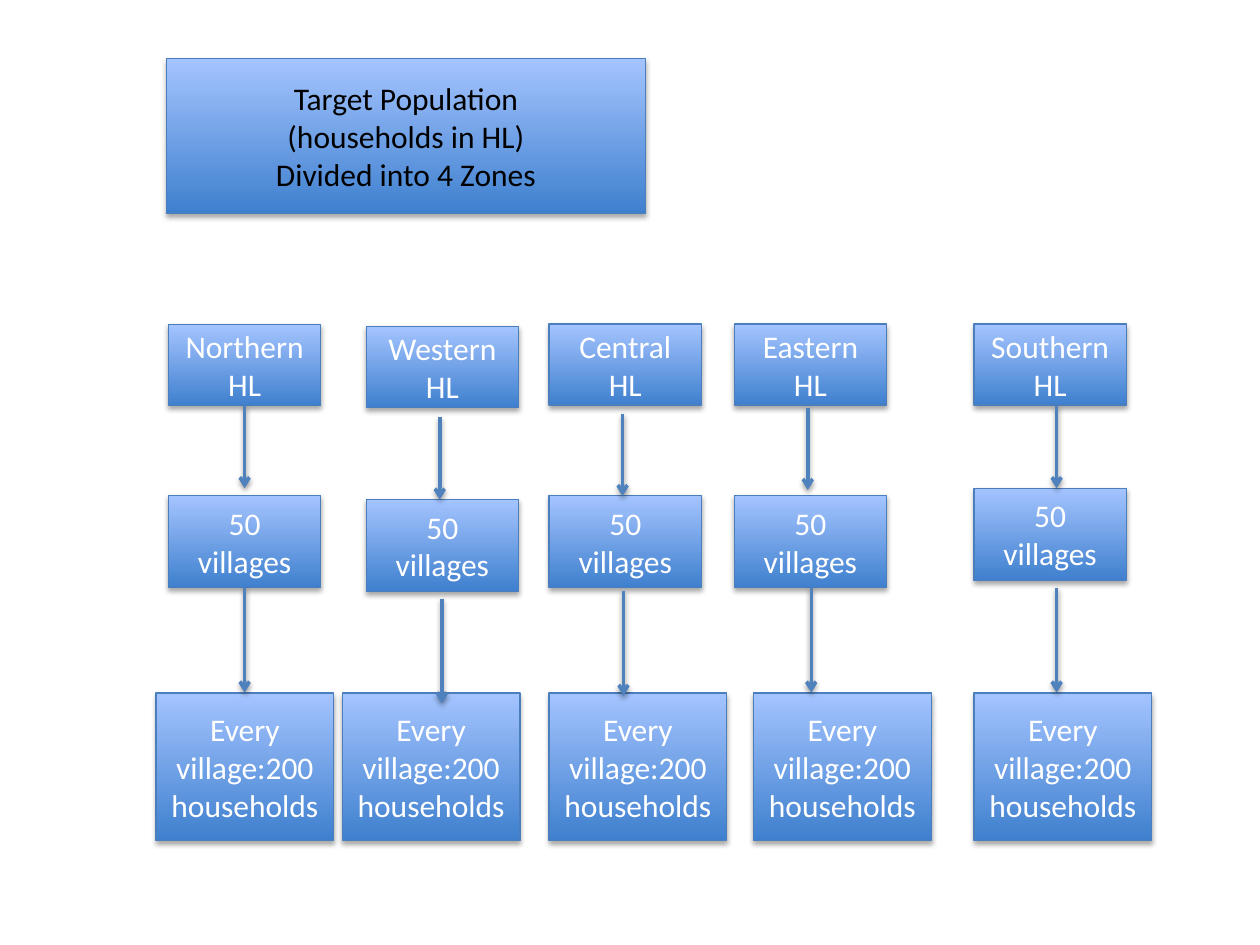
from lxml import etree
from pptx import Presentation
from pptx.dml.color import RGBColor
from pptx.enum.shapes import MSO_CONNECTOR as Connector, MSO_SHAPE as Shape
from pptx.enum.text import MSO_ANCHOR as Anchor, PP_ALIGN as Align
from pptx.oxml.ns import qn
from pptx.util import Pt


def color(value):
    return RGBColor.from_string(value)


def add_shadow(shape, opacity, distance):
    properties = shape._element.spPr
    effects = etree.SubElement(properties, qn("a:effectLst"))
    shadow = etree.SubElement(
        effects, qn("a:outerShdw"), blurRad=str(Pt(3.1)), dist=str(Pt(distance)),
        dir="5400000", rotWithShape="0")
    tint = etree.SubElement(shadow, qn("a:srgbClr"), val="000000")
    etree.SubElement(tint, qn("a:alpha"), val=str(opacity * 1000))


deck = Presentation()
deck.slide_width, deck.slide_height = Pt(720), Pt(540)
page = deck.slides.add_slide(deck.slide_layouts[6])

# Box sizes and the rules for each row
ZONE_SIZE = (87, 46.3)
VILLAGE_SIZE = (87, 52.6)
HOUSEHOLD_SIZE = (101.5, 84.2)
HOUSEHOLD_TOP = 396
ZONE_ARROW, VILLAGE_ARROW = 47, 60

# Zone lines, box left, zone top, village top, household left,
# then x and top of the arrow under the zone and under the villages
zones = [
    (["Northern HL"], 96.3, 185.5, 283.2, 89.2, (139.8, 232), (139.8, 335.8)),
    (["Western HL"], 209.3, 186.5, 285.4, 195.6, (251.3, 238.5), (252.5, 342)),
    (["Central", "HL"], 313.8, 185.2, 283.2, 313.8, (355.8, 236.5), (356.3, 337.7)),
    (["Eastern", "HL"], 419.6, 185.2, 283.2, 430.6, (461.6, 233), (463.6, 335.8)),
    (["Southern HL"], 556.6, 185.2, 279, 556.6, (603.8, 232), (603.8, 335.8)),
]

# Collect every box and arrow of the chart
boxes = [(["Target Population", "(households in HL)", "Divided into 4 Zones"],
          95, 33.3, (274, 88.7), "000000")]
arrows = []
for name, left, zone_top, village_top, household_left, upper, lower in zones:
    boxes += [
        (name, left, zone_top, ZONE_SIZE, "FFFFFF"),
        (["50 villages"], left, village_top, VILLAGE_SIZE, "FFFFFF"),
        (["Every village:200 households"], household_left, HOUSEHOLD_TOP,
         HOUSEHOLD_SIZE, "FFFFFF"),
    ]
    arrows += [(*upper, ZONE_ARROW), (*lower, VILLAGE_ARROW)]

# Boxes with gradient, shadow and centred text
for lines, left, top, (width, height), text_color in boxes:
    box = page.shapes.add_shape(
        Shape.FLOWCHART_PROCESS, Pt(left), Pt(top), Pt(width), Pt(height))
    box.fill.gradient()
    box.fill.gradient_angle = 90
    for stop, shade in zip(box.fill.gradient_stops, ("3F80CE", "A4C4FF")):
        stop.color.rgb = color(shade)
    box.line.color.rgb = color("4B7EBC")
    box.line.width = Pt(0.75)
    add_shadow(box, 35, 1.8)
    frame = box.text_frame
    frame.word_wrap = True
    frame.vertical_anchor = Anchor.MIDDLE
    for index, line in enumerate(lines):
        para = frame.add_paragraph() if index else frame.paragraphs[0]
        para.alignment = Align.CENTER
        span = para.add_run()
        span.text = line
        span.font.name = "Calibri"
        span.font.size = Pt(18)
        span.font.color.rgb = color(text_color)

# Arrows pointing down from row to row
for x, top, length in arrows:
    arrow = page.shapes.add_connector(
        Connector.STRAIGHT, Pt(x), Pt(top), Pt(x), Pt(top + length))
    arrow.line.color.rgb = color("4F81BD")
    arrow.line.width = Pt(2)
    outline = arrow._element.spPr.find(qn("a:ln"))
    etree.SubElement(outline, qn("a:tailEnd"), type="arrow")
    add_shadow(arrow, 38, 1.6)

deck.save("out.pptx")
